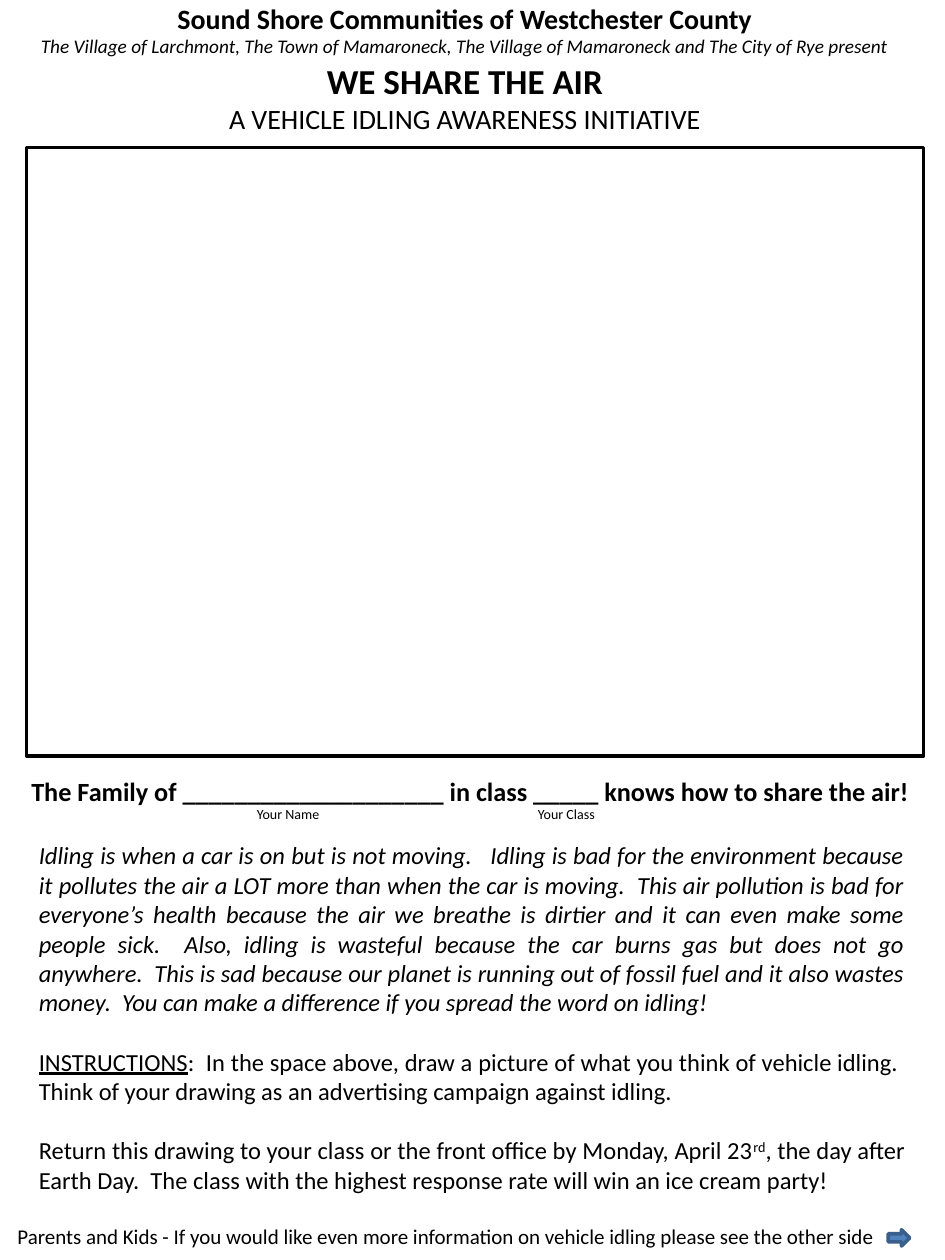
from pptx import Presentation
from pptx.dml.color import RGBColor
from pptx.enum.shapes import MSO_SHAPE
from pptx.enum.text import PP_ALIGN
from pptx.util import Inches, Pt

WIDE, HIGH = Inches(7.5), Inches(10)
COL, ROW = WIDE / 100, HIGH / 100
BLACK = "000000"


def color(code):
    return RGBColor.from_string(code)


def place(box):
    x, y, w, h = box
    return int(x * COL), int(y * ROW), int(w * COL), int(h * ROW)


def inner(box, x, y, w, h):
    return box[0] + x, box[1] + y, w, h


def text(slide, box, wrap=True):
    frame = slide.shapes.add_textbox(*place(box)).text_frame
    frame.word_wrap = wrap
    return frame


def line(frame, first, parts, size, bold=False, italic=False, align=PP_ALIGN.LEFT, gap=0):
    para = frame.paragraphs[0] if first else frame.add_paragraph()
    para.alignment = align
    if gap:
        para.space_before = Pt(gap)
    font = para.font
    font.name, font.size = "Calibri", Pt(size)
    font.bold, font.italic = bold, italic
    font.color.rgb = color(BLACK)
    runs = []
    for part in parts:
        run = para.add_run()
        run.text = part
        runs.append(run)
    return runs


def shape(slide, kind, box, edge, fill=None):
    item = slide.shapes.add_shape(kind, *place(box))
    item.shadow.inherit = False
    item.line.color.rgb = color(edge)
    item.line.width = Pt(2)
    if fill:
        item.fill.solid()
        item.fill.fore_color.rgb = color(fill)
    else:
        item.fill.background()


def head(slide, box):
    frame = text(slide, box)
    rows = [
        ("Sound Shore Communities of Westchester County", 16, True, False, 0),
        ("The Village of Larchmont, The Town of Mamaroneck, "
         "The Village of Mamaroneck and The City of Rye present", 11, False, True, 0),
        ("WE SHARE THE AIR", 20, True, False, 1.2),
        ("A VEHICLE IDLING AWARENESS INITIATIVE", 16, False, False, 0),
    ]
    for i, (words, size, bold, italic, gap) in enumerate(rows):
        line(frame, i == 0, [words], size, bold, italic, PP_ALIGN.CENTER, gap)


def canvas(slide, box):
    shape(slide, MSO_SHAPE.RECTANGLE, box, BLACK)


def pledge(slide, box):
    words = "The Family of ____________________ in class _____ knows how to share the air!"
    line(text(slide, inner(box, 0, 0, box[2], 3.5), False), True, [words], 15, bold=True)
    for label, x, w in [("Your Name", 23.87, 9.47), ("Your Class", 53.6, 8.93)]:
        line(text(slide, inner(box, x, 2.4, w, 2.4), False), True, [label], 8)


def body(slide, box):
    frame = text(slide, box)
    about = (
        "Idling is when a car is on but is not moving.   Idling is bad for the environment "
        "because it pollutes the air a LOT more than when the car is moving.  This air "
        "pollution is bad for everyone’s health because the air we breathe is dirtier and it "
        "can even make some people sick.  Also, idling is wasteful because the car burns gas "
        "but does not go anywhere.  This is sad because our planet is running out of fossil "
        "fuel and it also wastes money.  You can make a difference if you spread the word on "
        "idling!"
    )
    task = [
        "INSTRUCTIONS",
        ":  In the space above, draw a picture of what you think of vehicle idling.  "
        "Think of your drawing as an advertising campaign against idling.",
    ]
    due = [
        "Return this drawing to your class or the front office by Monday, April 23",
        "rd",
        ", the day after Earth Day.  The class with the highest response rate will win "
        "an ice cream party!",
    ]
    line(frame, True, [about], 14, italic=True, align=PP_ALIGN.JUSTIFY)
    title = line(frame, False, task, 14, align=PP_ALIGN.JUSTIFY, gap=17)[0]
    title.font.underline = True
    mark = line(frame, False, due, 14, align=PP_ALIGN.JUSTIFY, gap=17)[1]
    mark.font._element.set("baseline", "30000")


def foot(slide, box):
    words = ("Parents and Kids - If you would like even more information on vehicle idling "
             "please see the other side")
    line(text(slide, inner(box, 0, 0, 93.6, box[3])), True, [words], 12)
    shape(slide, MSO_SHAPE.RIGHT_ARROW, inner(box, 93.47, 1, 2.27, 1.3), "3A5F8C", "4F81BD")


def main():
    deck = Presentation()
    deck.slide_width, deck.slide_height = WIDE, HIGH
    slide = deck.slides.add_slide(deck.slide_layouts[6])
    head(slide, (2, -0.4, 94.4, 15.3))
    canvas(slide, (2.8, 11.7, 94.93, 48.3))
    pledge(slide, (2, 61, 96.53, 4.8))
    body(slide, (2.8, 66.2, 94.27, 29))
    foot(slide, (0.53, 96.6, 95.74, 3))
    deck.save("out.pptx")


if __name__ == "__main__":
    main()
